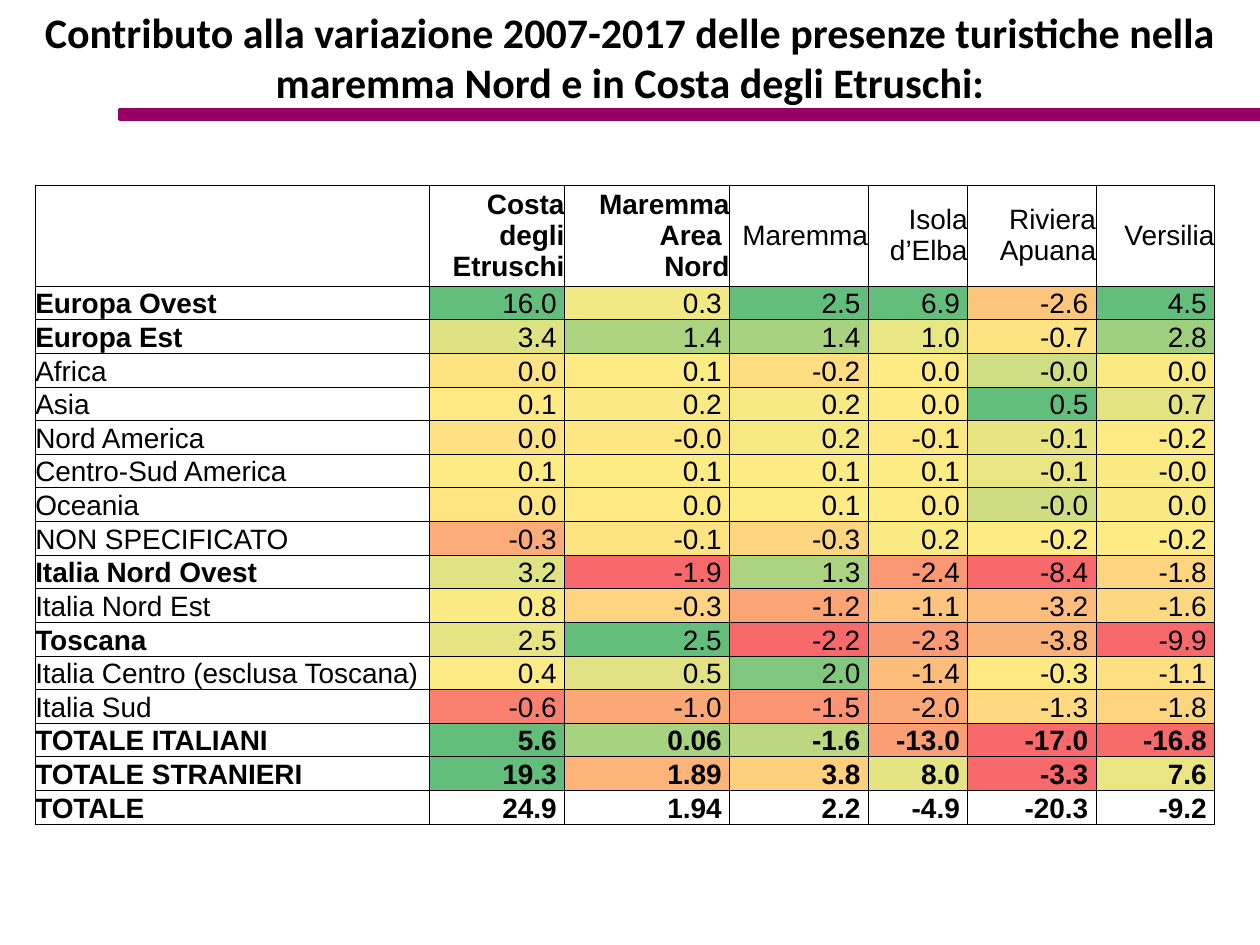
from dataclasses import dataclass

import pptx
import pptx.dml.color
import pptx.enum.shapes
import pptx.enum.text
import pptx.oxml
import pptx.oxml.ns
import pptx.util
from pptx.util import Inches

ALIGN = pptx.enum.text.PP_ALIGN
ANCHOR = pptx.enum.text.MSO_ANCHOR


@dataclass(frozen=True)
class Theme:
    ink: str = "000000"
    accent: str = "960064"
    title_font: str = "Calibri"
    table_font: str = "Arial"
    title_size: float = 24
    table_size: float = 16
    bar_line: float = 2
    cell_line: float = 0.5


THEME = Theme()
TITLE = ("Contributo alla variazione 2007-2017 delle presenze turistiche nella "
         "maremma Nord e in Costa degli Etruschi:")
HEADERS = ["", "Costa degli Etruschi", "Maremma Area \nNord", "Maremma",
           "Isola d’Elba", "Riviera Apuana", "Versilia"]
BOLD_HEADERS = HEADERS[1:3]
BOLD_LABELS = {"Europa Ovest", "Europa Est", "Italia Nord Ovest", "Toscana"}
COLUMN_WIDTHS = [3.13, 1.07, 1.31, 1.1, 0.79, 1.02, 0.94]
HEADER_HEIGHT, ROW_HEIGHT = 0.75, 0.25

# Each row: label, values by area, heat-map fills by area
ROWS = [
    ("Europa Ovest", "16.0 0.3 2.5 6.9 -2.6 4.5",
     "63BE7B F2E884 63BE7B 63BE7B FCC57C 63BE7B"),
    ("Europa Est", "3.4 1.4 1.4 1.0 -0.7 2.8",
     "DFE283 ABD380 A8D27F E8E583 FEE382 9ECF7F"),
    ("Africa", "0.0 0.1 -0.2 0.0 -0.0 0.0",
     "FEE382 FEEB84 FEDE81 FEEB84 CFDE82 F9EA84"),
    ("Asia", "0.1 0.2 0.2 0.0 0.5 0.7",
     "FEE983 F9EA84 F7E984 FEEB84 63BE7B E3E383"),
    ("Nord America", "0.0 -0.0 0.2 -0.1 -0.1 -0.2",
     "FEE182 FEE783 F6E984 FEE883 E6E483 FEEA83"),
    ("Centro-Sud America", "0.1 0.1 0.1 0.1 -0.1 -0.0",
     "FFEB84 FDEB84 FDEB84 FDEB84 EAE583 FAEA84"),
    ("Oceania", "0.0 0.0 0.1 0.0 -0.0 0.0",
     "FEE482 FEE983 FDEB84 FEEB84 CEDD82 F8E984"),
    ("NON SPECIFICATO", "-0.3 -0.1 -0.3 0.2 -0.2 -0.2",
     "FBAB77 FEE382 FDD57F FAEA84 FFEB84 FFEB84"),
    ("Italia Nord Ovest", "3.2 -1.9 1.3 -2.4 -8.4 -1.8",
     "E0E383 F8696B ABD380 FA9874 F8696B FDD57F"),
    ("Italia Nord Est", "0.8 -0.3 -1.2 -1.1 -3.2 -1.6",
     "F9EA84 FDD47F FBA476 FCC47C FCBC7B FED880"),
    ("Toscana", "2.5 2.5 -2.2 -2.3 -3.8 -9.9",
     "E7E583 63BE7B F8696B FA9A74 FBB279 F8696B"),
    ("Italia Centro (esclusa Toscana)", "0.4 0.5 2.0 -1.4 -0.3 -1.1",
     "FCEB84 E0E283 81C77D FCBD7B FEE983 FEDF81"),
    ("Italia Sud", "-0.6 -1.0 -1.5 -2.0 -1.3 -1.8",
     "F9806F FBA877 FA9473 FBA776 FED980 FDD57F"),
    ("TOTALE ITALIANI", "5.6 0.06 -1.6 -13.0 -17.0 -16.8",
     "63BE7B A7D27F BBD881 FA9E75 F8696B F86B6B"),
    ("TOTALE STRANIERI", "19.3 1.89 3.8 8.0 -3.3 7.6",
     "63BE7B FCB479 FDD07E E4E483 F8696B EAE583"),
    ("TOTALE", "24.9 1.94 2.2 -4.9 -20.3 -9.2", ""),
]


def rgb(value):
    return pptx.dml.color.RGBColor.from_string(value)


def write_text(frame, text, font_name, size, bold, align):
    frame.text = text
    for para in frame.paragraphs:
        para.alignment = align
        para.font.name = font_name
        para.font.size = pptx.util.Pt(size)
        para.font.bold = bold
        para.font.color.rgb = rgb(THEME.ink)


def add_bar(page):
    bar = page.shapes.add_shape(pptx.enum.shapes.MSO_SHAPE.RECTANGLE,
                                Inches(0.95), Inches(0.87), Inches(9.05), Inches(0.08))
    bar.shadow.inherit = False
    bar.fill.solid()
    bar.fill.fore_color.rgb = rgb(THEME.accent)
    bar.line.color.rgb = rgb(THEME.accent)
    bar.line.width = pptx.util.Pt(THEME.bar_line)


def add_title(page):
    box = page.shapes.add_textbox(0, 0, Inches(10), Inches(1.21))
    frame = box.text_frame
    frame.word_wrap = True
    write_text(frame, TITLE, THEME.title_font, THEME.title_size, True, ALIGN.CENTER)


def add_borders(cell):
    """Draw all four edges; they must come before the fill in the cell properties."""
    properties = cell._tc.get_or_add_tcPr()
    width = pptx.util.Pt(THEME.cell_line)
    for position, edge in enumerate(("lnL", "lnR", "lnT", "lnB")):
        properties.insert(position, pptx.oxml.parse_xml(
            f'<a:{edge} {pptx.oxml.ns.nsdecls("a")} w="{width}"><a:solidFill>'
            f'<a:srgbClr val="{THEME.ink}"/></a:solidFill></a:{edge}>'))


def fill_cell(cell, text, bold, align, anchor, color=None):
    cell.margin_left = cell.margin_right = cell.margin_top = cell.margin_bottom = 0
    cell.vertical_anchor = anchor
    write_text(cell.text_frame, text, THEME.table_font, THEME.table_size, bold, align)
    if color:
        cell.fill.solid()
        cell.fill.fore_color.rgb = rgb(color)
    else:
        cell.fill.background()
    add_borders(cell)


def add_heat_table(page):
    height = HEADER_HEIGHT + ROW_HEIGHT * len(ROWS)
    table = page.shapes.add_table(len(ROWS) + 1, len(HEADERS), Inches(0.28), Inches(1.47),
                                  Inches(sum(COLUMN_WIDTHS)), Inches(height)).table
    table.first_row = table.horz_banding = False
    for column, width in zip(table.columns, COLUMN_WIDTHS):
        column.width = Inches(width)
    for row in table.rows:
        row.height = Inches(ROW_HEIGHT)
    table.rows[0].height = Inches(HEADER_HEIGHT)

    for index, header in enumerate(HEADERS):
        fill_cell(table.cell(0, index), header, header in BOLD_HEADERS,
                  ALIGN.RIGHT, ANCHOR.MIDDLE)
    for line, (label, values, fills) in enumerate(ROWS, start=1):
        is_total = label.startswith("TOTALE")
        fill_cell(table.cell(line, 0), label, is_total or label in BOLD_LABELS,
                  ALIGN.LEFT, ANCHOR.BOTTOM)
        colors = fills.split() or [None] * (len(HEADERS) - 1)
        for index, (value, color) in enumerate(zip(values.split(), colors), start=1):
            fill_cell(table.cell(line, index), f"{value} ", is_total,
                      ALIGN.RIGHT, ANCHOR.BOTTOM, color)


def main():
    deck = pptx.Presentation()
    deck.slide_width, deck.slide_height = Inches(10), Inches(7.5)
    page = deck.slides.add_slide(deck.slide_layouts[6])
    add_bar(page)
    add_title(page)
    add_heat_table(page)
    deck.save("out.pptx")


if __name__ == "__main__":
    main()
